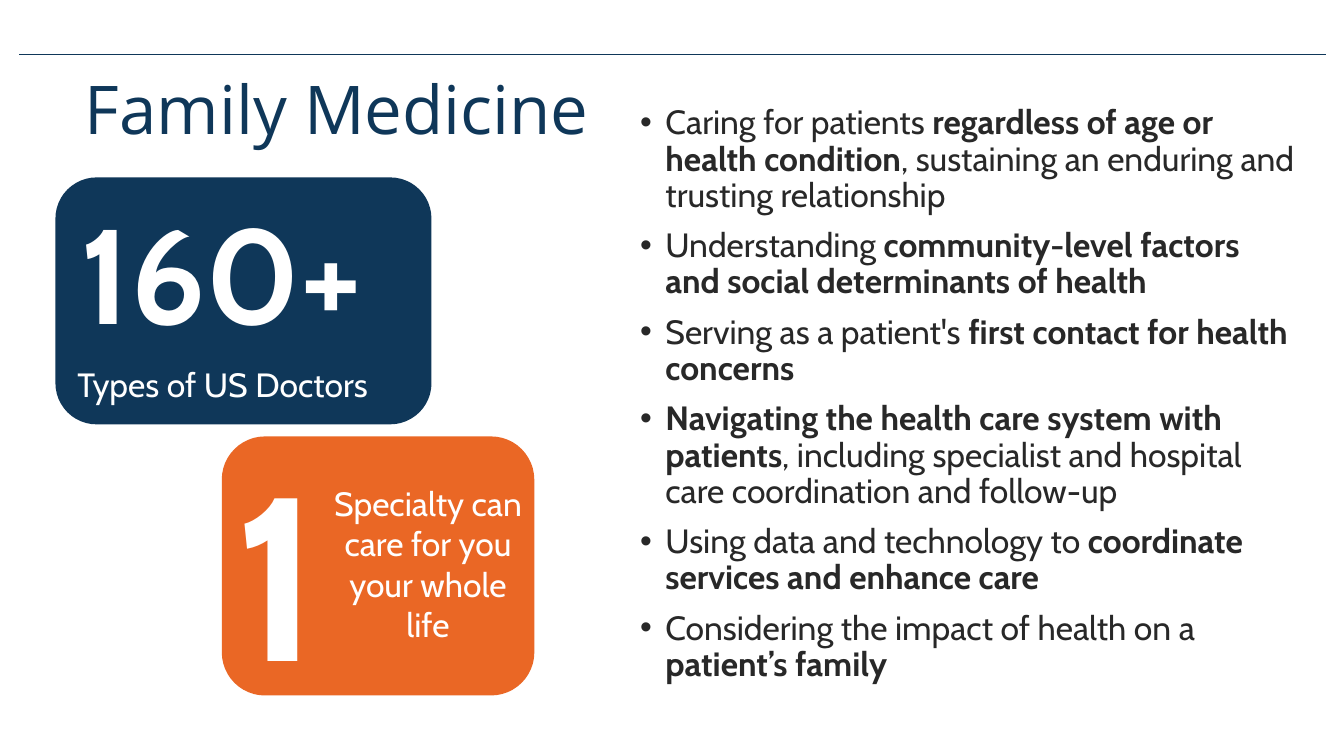
import pptx
import pptx.util
import pptx.dml.color
import pptx.enum.shapes
import pptx.enum.text
import pptx.oxml.ns
import lxml.etree
from dataclasses import dataclass

Inches = pptx.util.Inches
Pt = pptx.util.Pt
ALIGN = pptx.enum.text.PP_ALIGN
FIT = pptx.enum.text.MSO_AUTO_SIZE


@dataclass(frozen=True)
class Theme:
    navy: str = "0F3759"
    orange: str = "EA6725"
    ink: str = "282828"
    white: str = "FFFFFF"
    head_font: str = "Open Sans"
    body_font: str = "Cabin"
    title: int = 48
    body: int = 24
    big: int = 96
    huge: int = 166


THEME = Theme()

# Each bullet is a list of (text, bold) runs
BULLETS = [
    [("Caring for patients ", False), ("regardless of age or health condition", True),
     (", sustaining an enduring and trusting relationship", False)],
    [("Understanding ", False),
     ("community-level factors and social determinants of health", True)],
    [("Serving as a patient's ", False), ("first contact for health concerns", True)],
    [("Navigating the health care system with patients", True),
     (", including specialist and hospital care coordination and follow-up", False)],
    [("Using data and technology to ", False),
     ("coordinate services and enhance care", True)],
    [("Considering the impact of health on a ", False), ("patient’s family", True)],
]


def rgb(color):
    return pptx.dml.color.RGBColor.from_string(color)


def place(sp, left, top, width, height):
    sp.left, sp.top = Inches(left), Inches(top)
    sp.width, sp.height = Inches(width), Inches(height)


def add_run(p, text, *, size=THEME.body, color=THEME.white, font=THEME.body_font, bold=False):
    r = p.add_run()
    r.text = text
    r.font.size = Pt(size)
    r.font.name = font
    r.font.bold = bold
    r.font.color.rgb = rgb(color)


def set_bullet(p, indent=0.25):
    pPr = p._p.get_or_add_pPr()
    pPr.set("marL", str(Inches(indent)))
    pPr.set("indent", str(-Inches(indent)))
    qn = pptx.oxml.ns.qn
    lxml.etree.SubElement(pPr, qn("a:buFont")).set("typeface", "Arial")
    lxml.etree.SubElement(pPr, qn("a:buChar")).set("char", "•")


def fill_title(sp, text):
    place(sp, 0.74, 0.71, 11.5, 1.45)
    tf = sp.text_frame
    tf.vertical_anchor = pptx.enum.text.MSO_ANCHOR.TOP
    tf.auto_size = FIT.NONE
    p = tf.paragraphs[0]
    p.alignment = ALIGN.LEFT
    p.line_spacing = 0.9
    add_run(p, text, size=THEME.title, color=THEME.navy, font=THEME.head_font)


def fill_bullets(sp, bullets):
    place(sp, 6.25, 1, 6.69, 6.37)
    tf = sp.text_frame
    tf.auto_size = FIT.NONE
    for i, runs in enumerate(bullets):
        p = tf.add_paragraph() if i else tf.paragraphs[0]
        set_bullet(p)
        p.line_spacing = 0.9
        p.space_before = Pt(10 if i else 0)
        for text, bold in runs:
            add_run(p, text, color=THEME.ink, bold=bold)


def add_rule(s, x1, x2, y):
    line = s.shapes.add_connector(pptx.enum.shapes.MSO_CONNECTOR.STRAIGHT,
                                  Inches(x1), Inches(y), Inches(x2), Inches(y))
    line.line.color.rgb = rgb(THEME.navy)
    line.line.width = Pt(0.5)
    lxml.etree.SubElement(line._element.spPr, pptx.oxml.ns.qn("a:effectLst"))


def add_card(s, box, color):
    """Add a group holding a rounded card and return the group."""
    card = s.shapes.add_group_shape()
    sp = card.shapes.add_shape(pptx.enum.shapes.MSO_SHAPE.ROUNDED_RECTANGLE,
                               *map(Inches, box))
    sp.shadow.inherit = False
    sp.fill.solid()
    sp.fill.fore_color.rgb = rgb(color)
    sp.line.fill.background()
    return card


def add_label(card, box, text, *, wrap=False, align=ALIGN.LEFT, **style):
    tf = card.shapes.add_textbox(*map(Inches, box)).text_frame
    tf.word_wrap = wrap
    tf.auto_size = FIT.SHAPE_TO_FIT_TEXT
    p = tf.paragraphs[0]
    p.alignment = align
    add_run(p, text, **style)


def main():
    prs = pptx.Presentation()
    prs.slide_width, prs.slide_height = Inches(13.33), Inches(7.5)
    s = prs.slides.add_slide(prs.slide_layouts[1])

    # Rule, title and list
    add_rule(s, 0.19, 13.15, 0.54)
    fill_title(s.shapes.title, "Family Medicine")
    fill_bullets(s.placeholders[1], BULLETS)

    # Doctor types card
    doctors = add_card(s, (0.55, 1.76, 3.73, 2.45), THEME.navy)
    add_label(doctors, (0.7, 1.84, 3.43, 1.92), "160+", size=THEME.big, bold=True)
    add_label(doctors, (0.67, 3.56, 3.49, 0.57), "Types of US Doctors")

    # Single specialty card
    specialty = add_card(s, (2.2, 4.33, 3.1, 2.57), THEME.orange)
    add_label(specialty, (2.23, 4.21, 1.33, 2.89), "1", wrap=True,
              size=THEME.huge, bold=True)
    add_label(specialty, (3.18, 4.74, 2.13, 1.72),
              "Specialty can care for you your whole life", wrap=True, align=ALIGN.CENTER)

    prs.save("out.pptx")


if __name__ == "__main__":
    main()
